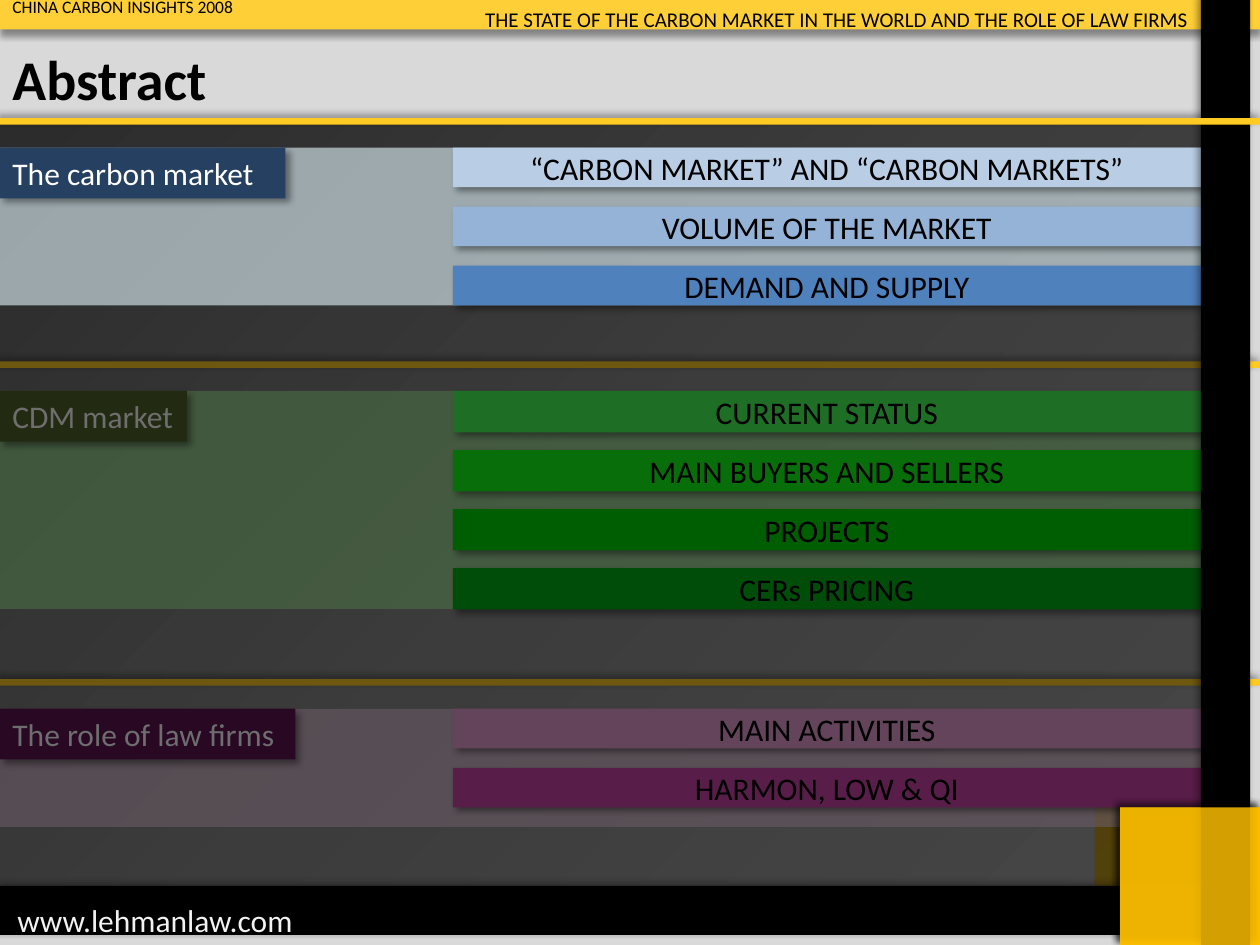
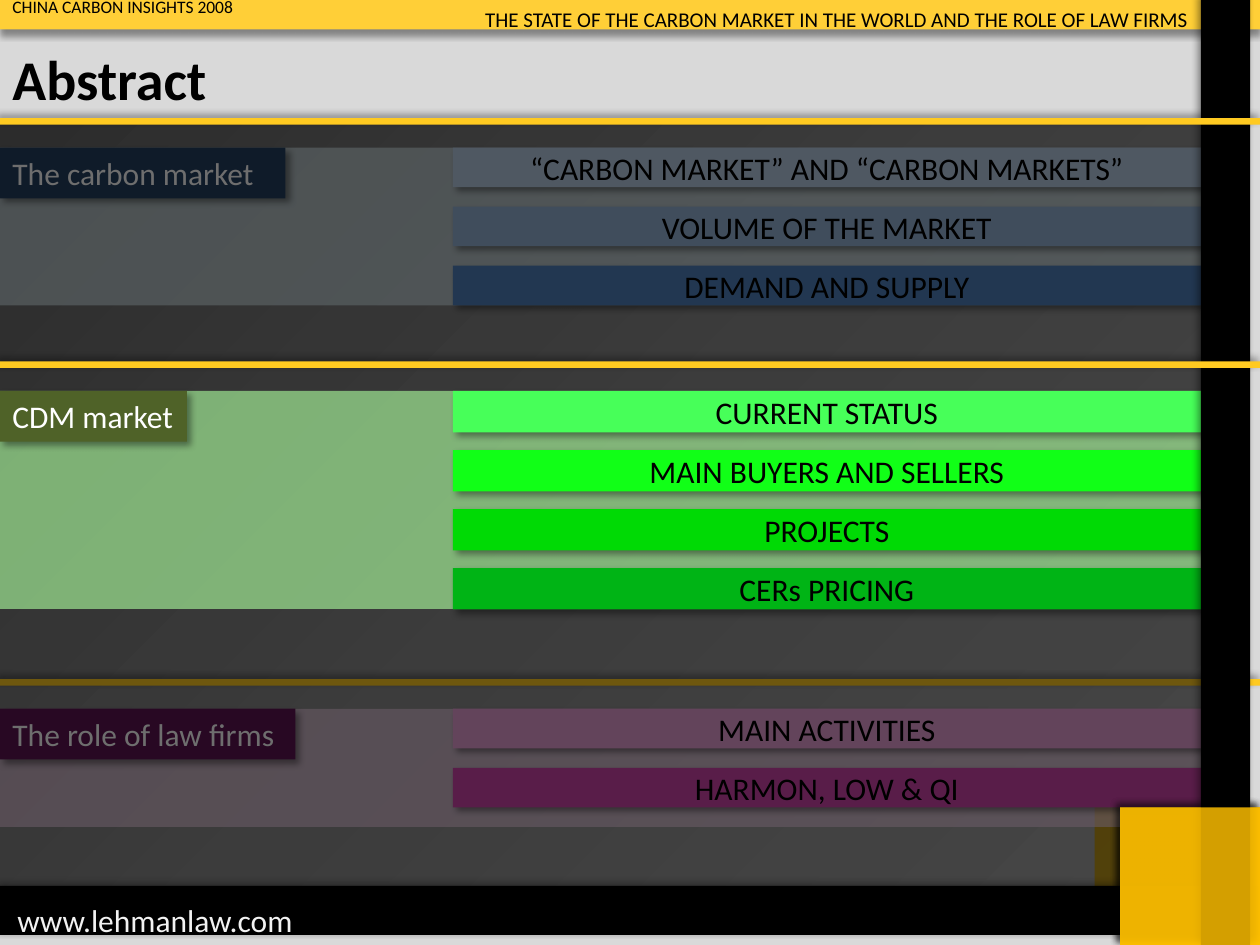
"""Build two agenda slides that light up one chapter of the abstract at a time."""
from copy import deepcopy
from dataclasses import dataclass

from lxml import etree
from pptx import Presentation
from pptx.dml.color import RGBColor
from pptx.enum.shapes import MSO_SHAPE
from pptx.enum.text import MSO_ANCHOR, PP_ALIGN
from pptx.oxml.ns import qn
from pptx.util import Inches, Pt

RECTANGLE = MSO_SHAPE.RECTANGLE
TOP, MIDDLE = MSO_ANCHOR.TOP, MSO_ANCHOR.MIDDLE
LEFT, CENTER, RIGHT = PP_ALIGN.LEFT, PP_ALIGN.CENTER, PP_ALIGN.RIGHT


@dataclass(frozen=True)
class Theme:
    font: str = "Calibri"
    title_size: int = 32
    body_size: int = 18
    header_size: int = 12
    event_size: int = 10
    black: str = "000000"
    white: str = "FFFFFF"
    footer_text: str = "F2F2F2"
    frame: str = "D9D9D9"
    header: str = "FFCF37"
    rule: str = "FFCA21"
    corner: str = "FFC000"
    corner_back: str = "C49500"
    backdrop: tuple = ("626262", "8C8C8C", "A6A6A6")
    corner_alpha: int = 83
    veil_alpha: int = 57


theme = Theme()
COLUMN = Inches(10) / 64
ROW = Inches(7.5) / 16
DOWN, DOWN_RIGHT, UP_LEFT = 90, 45, 225
CONTENT_WIDTH = 61
ITEM_LEFT = 23
CORNER = (56.9, 13.67, 7.1, 2.33)

chapters = [
    dict(name="The carbon market", top=2.5, tag_width=14.5, band_height=2.67,
         item_height=0.67, band="DBEEF4", band_alpha=63, tag="254061",
         items=[("“CARBON MARKET” AND “CARBON MARKETS”", "B9CDE5"),
                ("VOLUME OF THE MARKET", "95B3D7"),
                ("DEMAND AND SUPPLY", "4F81BD")]),
    dict(name="CDM market", top=6.62, tag_width=9.5, band_height=3.69,
         item_height=0.7, band="ADFF9F", band_alpha=62, tag="4F6228",
         items=[("CURRENT STATUS", "47FF59"),
                ("MAIN BUYERS AND SELLERS", "11FF17"),
                ("PROJECTS", "00DA05"),
                ("CERs PRICING", "00B415")]),
    dict(name="The role of law firms", top=12, tag_width=15, band_height=2,
         item_height=0.67, band="F3D1EA", band_alpha=62, tag="5D1352",
         items=[("MAIN ACTIVITIES", "E69ED3"),
                ("HARMON, LOW & QI", "CF45AB")]),
]
rule_tops = [2, 6.12, 11.5]


def add_block(page, place, color, alpha=100, shadow=None):
    left, top, width, height = place
    box = page.shapes.add_shape(RECTANGLE, round(left * COLUMN), round(top * ROW),
                                round(width * COLUMN), round(height * ROW))
    box.line.fill.background()
    box.fill.solid()
    box.fill.fore_color.rgb = RGBColor.from_string(color)
    box.shadow.inherit = False
    properties = box._element.spPr
    if alpha < 100:
        tint = properties.find(f"{qn('a:solidFill')}/{qn('a:srgbClr')}")
        etree.SubElement(tint, qn("a:alpha"), val=str(alpha * 1000))
    if shadow is not None:
        outer = etree.SubElement(properties.find(qn("a:effectLst")), qn("a:outerShdw"),
                                 blurRad=str(Pt(4)), dist=str(Pt(3)),
                                 dir=str(shadow * 60000), rotWithShape="0")
        shade = etree.SubElement(outer, qn("a:srgbClr"), val=theme.black)
        etree.SubElement(shade, qn("a:alpha"), val="40000")
    return box


def add_words(page, words, size, color, place=None, box=None, align=LEFT,
              anchor=TOP, bold=False):
    if box is None:
        left, top, width, height = place
        box = page.shapes.add_textbox(round(left * COLUMN), round(top * ROW),
                                      round(width * COLUMN), round(height * ROW))
    frame = box.text_frame
    frame.word_wrap = True
    frame.vertical_anchor = anchor
    para = frame.paragraphs[0]
    para.alignment = align
    span = para.add_run()
    span.text = words
    span.font.name = theme.font
    span.font.size = Pt(size)
    span.font.bold = bold
    span.font.color.rgb = RGBColor.from_string(color)


deck = Presentation()
deck.slide_width, deck.slide_height = Inches(10), Inches(7.5)

for active in (0, 1):
    page = deck.slides.add_slide(deck.slide_layouts[6])

    backdrop = add_block(page, (0, 0, 64, 16), theme.frame)
    backdrop.fill.gradient()
    backdrop.fill.gradient_angle = 315
    stop_list = backdrop._element.spPr.find(f"{qn('a:gradFill')}/{qn('a:gsLst')}")
    stop_list.append(deepcopy(stop_list[0]))
    for index, stop in enumerate(backdrop.fill.gradient_stops):
        stop.position = index / 2
        stop.color.rgb = RGBColor.from_string(theme.backdrop[index])

    add_block(page, (63.4, 0, 0.6, 16), theme.frame)
    add_block(page, (55.6, 13.29, 7.1, 2.33), theme.corner_back, theme.corner_alpha)
    add_block(page, (0, 0, 63, 2), theme.frame)
    add_block(page, (0, 15.75, 64, 0.25), theme.frame)
    add_block(page, (0, 0, 64, 0.5), theme.header, shadow=DOWN)
    add_block(page, (0, 15, 64, 0.83), theme.black, shadow=UP_LEFT)
    add_block(page, CORNER, theme.corner, theme.corner_alpha, UP_LEFT)
    add_words(page, "www.lehmanlaw.com", theme.body_size, theme.footer_text,
              (-3, 15.15, 18.5, 0.85), align=RIGHT)

    lit_rules = sorted({0, active})
    for index, top in enumerate(rule_tops):
        if index not in lit_rules:
            add_block(page, (0, top, 64, 0.11), theme.rule, shadow=UP_LEFT)

    dimmed = [chapter for chapter in chapters if chapter is not chapters[active]]
    for chapter in dimmed + [chapters[active]]:
        if chapter is chapters[active]:
            add_block(page, (0, 2, CONTENT_WIDTH, 13), theme.black, theme.veil_alpha)
        top = chapter["top"]
        add_block(page, (0, top, CONTENT_WIDTH, chapter["band_height"]),
                  chapter["band"], chapter["band_alpha"])
        for index, (words, color) in enumerate(chapter["items"]):
            item = add_block(page, (ITEM_LEFT, top + index, CONTENT_WIDTH - ITEM_LEFT,
                                    chapter["item_height"]), color, shadow=DOWN_RIGHT)
            add_words(page, words, theme.body_size, theme.black, box=item,
                      align=CENTER, anchor=MIDDLE)
        tag = add_block(page, (0, top, chapter["tag_width"], 0.86), chapter["tag"],
                        shadow=DOWN_RIGHT)
        add_words(page, chapter["name"], theme.body_size, theme.white, box=tag)

    add_block(page, CORNER, theme.corner, theme.corner_alpha, UP_LEFT)
    add_words(page, "Abstract", theme.title_size, theme.black,
              (0, 0.64, CONTENT_WIDTH, 1.36), bold=True)
    add_block(page, (CONTENT_WIDTH, 0, 2.5, 16), theme.black, shadow=UP_LEFT)
    add_block(page, CORNER, theme.corner, theme.corner_alpha, UP_LEFT)
    add_words(page, "THE STATE OF THE CARBON MARKET IN THE WORLD AND THE ROLE OF LAW FIRMS",
              theme.header_size, theme.black, (0, 0, CONTENT_WIDTH, 0.66), align=RIGHT)
    add_words(page, "CHINA CARBON INSIGHTS 2008", theme.event_size, theme.black,
              (0, -0.17, 24.5, 0.58))
    for index in lit_rules:
        add_block(page, (0, rule_tops[index], 64, 0.11), theme.rule, shadow=UP_LEFT)

deck.save("out.pptx")
